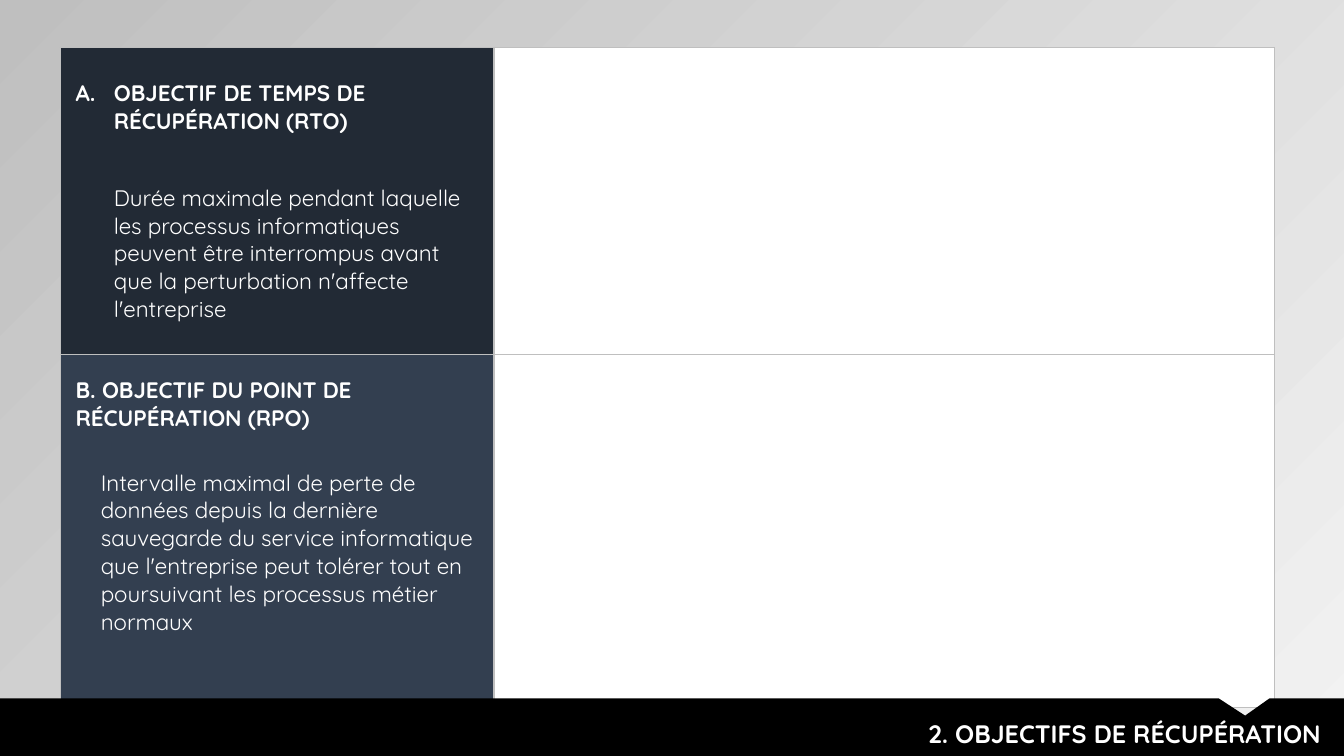
import pptx
import pptx.dml.color
import pptx.enum.text
import pptx.oxml
import pptx.oxml.ns
import pptx.util
from lxml import etree

Inches, Pt = pptx.util.Inches, pptx.util.Pt
RGBColor = pptx.dml.color.RGBColor
PP_ALIGN = pptx.enum.text.PP_ALIGN
ANCHOR = pptx.enum.text.MSO_ANCHOR
qn = pptx.oxml.ns.qn

WIDTH, HEIGHT = 13.33, 7.5
FONT = "Quicksand"
WHITE = RGBColor(0xFF, 0xFF, 0xFF)
BLACK = RGBColor(0, 0, 0)
NAVY = RGBColor(0x22, 0x2A, 0x35)
SLATE = RGBColor(0x33, 0x3F, 0x50)
RULE = RGBColor(0xBF, 0xBF, 0xBF)
PALE = RGBColor(0xF2, 0xF2, 0xF2)

COLUMNS = (4.3, 7.74)
ROWS = (3.05, 0.98, 2.52)
RTO_TITLE = "OBJECTIF DE TEMPS DE RÉCUPÉRATION (RTO)"
RTO_TEXT = ("Durée maximale pendant laquelle les processus informatiques peuvent être "
            "interrompus avant que la perturbation n'affecte l'entreprise")
RPO_TITLE = "B. OBJECTIF DU POINT DE RÉCUPÉRATION (RPO)"
RPO_TEXT = ("Intervalle maximal de perte de données depuis la dernière sauvegarde du "
            "service informatique que l'entreprise peut tolérer tout en poursuivant "
            "les processus métier normaux")


def write(paragraph, text, size=16, bold=False, align=PP_ALIGN.LEFT, before=0,
          margin=0, bullet=None):
    """Fill a paragraph; margin is in inches, bullet an automatic numbering type."""
    paragraph.alignment = align
    paragraph.space_before = Pt(before)
    properties = paragraph._p.get_or_add_pPr()
    properties.set("marL", str(Inches(margin)))
    properties.set("indent", str(-Inches(margin) if bullet else 0))
    if bullet:
        etree.SubElement(properties, qn("a:buFont"), typeface=FONT)
        etree.SubElement(properties, qn("a:buAutoNum"), type=bullet)
    run = paragraph.add_run()
    run.text = text
    run.font.name, run.font.size, run.font.bold = FONT, Pt(size), bold
    run.font.color.rgb = WHITE


def format_cell(cell, color, sides="LRTB", anchor=ANCHOR.MIDDLE, left=0.15):
    """Draw the borders named in sides and set fill, anchor and margins."""
    properties = cell._tc.get_or_add_tcPr()
    for side in "LRTB":
        border = etree.SubElement(properties, qn(f"a:ln{side}"), w=str(Pt(1)))
        if side in sides:
            fill = etree.SubElement(border, qn("a:solidFill"))
            etree.SubElement(fill, qn("a:srgbClr"), val=str(RULE))
        else:
            etree.SubElement(border, qn("a:noFill"))
    cell.fill.solid()
    cell.fill.fore_color.rgb = color
    cell.vertical_anchor = anchor
    cell.margin_left = Inches(left)
    cell.margin_top = cell.margin_right = cell.margin_bottom = Inches(0.15)


def add_objectives(slide, left, top):
    frame = slide.shapes.add_table(len(ROWS), len(COLUMNS), Inches(left), Inches(top),
                                   Inches(sum(COLUMNS)), Inches(sum(ROWS)))
    objectives = frame.table
    objectives.first_row = objectives.horz_banding = False
    for column, width in zip(objectives.columns, COLUMNS):
        column.width = Inches(width)
    for row, height in zip(objectives.rows, ROWS):
        row.height = Inches(height)
    objectives.cell(1, 1).merge(objectives.cell(2, 1))

    rto, rpo_title, rpo_text = (objectives.cell(row, 0) for row in range(len(ROWS)))
    format_cell(rto, NAVY)
    format_cell(rpo_title, SLATE, sides="LRT")
    format_cell(rpo_text, SLATE, sides="LRB", anchor=ANCHOR.TOP, left=0.4)
    for row in range(len(ROWS)):
        format_cell(objectives.cell(row, 1), WHITE)

    write(rto.text_frame.paragraphs[0], RTO_TITLE, bold=True, margin=0.38,
          bullet="alphaUcPeriod")
    write(rto.text_frame.add_paragraph(), RTO_TEXT, before=35, margin=0.38)
    write(rpo_title.text_frame.paragraphs[0], RPO_TITLE, bold=True)
    write(rpo_text.text_frame.paragraphs[0], RPO_TEXT)


def add_title_band(slide, left, top, width, height):
    """Place the notched black band with the slide title on it."""
    right, bottom = left + width, top + height
    notch = ((right - 1.24, top), (right - 0.98, top + 0.17), (right - 0.74, top))
    outline = slide.shapes.build_freeform(Inches(left), Inches(top))
    outline.add_line_segments(
        [(Inches(x), Inches(y))
         for x, y in (*notch, (right, top), (right, bottom), (left, bottom))])
    band = outline.convert_to_shape()
    band.shadow.inherit = False
    band.fill.solid()
    band.fill.fore_color.rgb = BLACK
    band.line.fill.background()

    title = slide.shapes.title
    slide.shapes._spTree.append(title._element)
    title.left, title.top = Inches(right - 9.19), Inches(top + 0.15)
    title.width, title.height = Inches(9.06), Inches(0.4)
    title.text_frame.word_wrap = True
    title.text_frame.auto_size = pptx.enum.text.MSO_AUTO_SIZE.NONE
    title.text_frame.vertical_anchor = ANCHOR.MIDDLE
    write(title.text_frame.paragraphs[0], "2. OBJECTIFS DE RÉCUPÉRATION", size=18,
          bold=True, align=PP_ALIGN.RIGHT)


def paint_background(slide):
    fill = slide.background.fill
    fill.gradient()
    fill.gradient_angle = 135
    for stop, color in zip(fill.gradient_stops, (PALE, RULE)):
        stop.color.rgb = color


def main():
    deck = pptx.Presentation()
    deck.slide_width, deck.slide_height = Inches(WIDTH), Inches(HEIGHT)
    slide = deck.slides.add_slide(deck.slide_layouts.get_by_name("Title Only"))
    paint_background(slide)
    add_objectives(slide, 0.6, 0.47)
    add_title_band(slide, 0, HEIGHT - 0.57, WIDTH, 0.57)
    deck.save("out.pptx")


if __name__ == "__main__":
    main()
